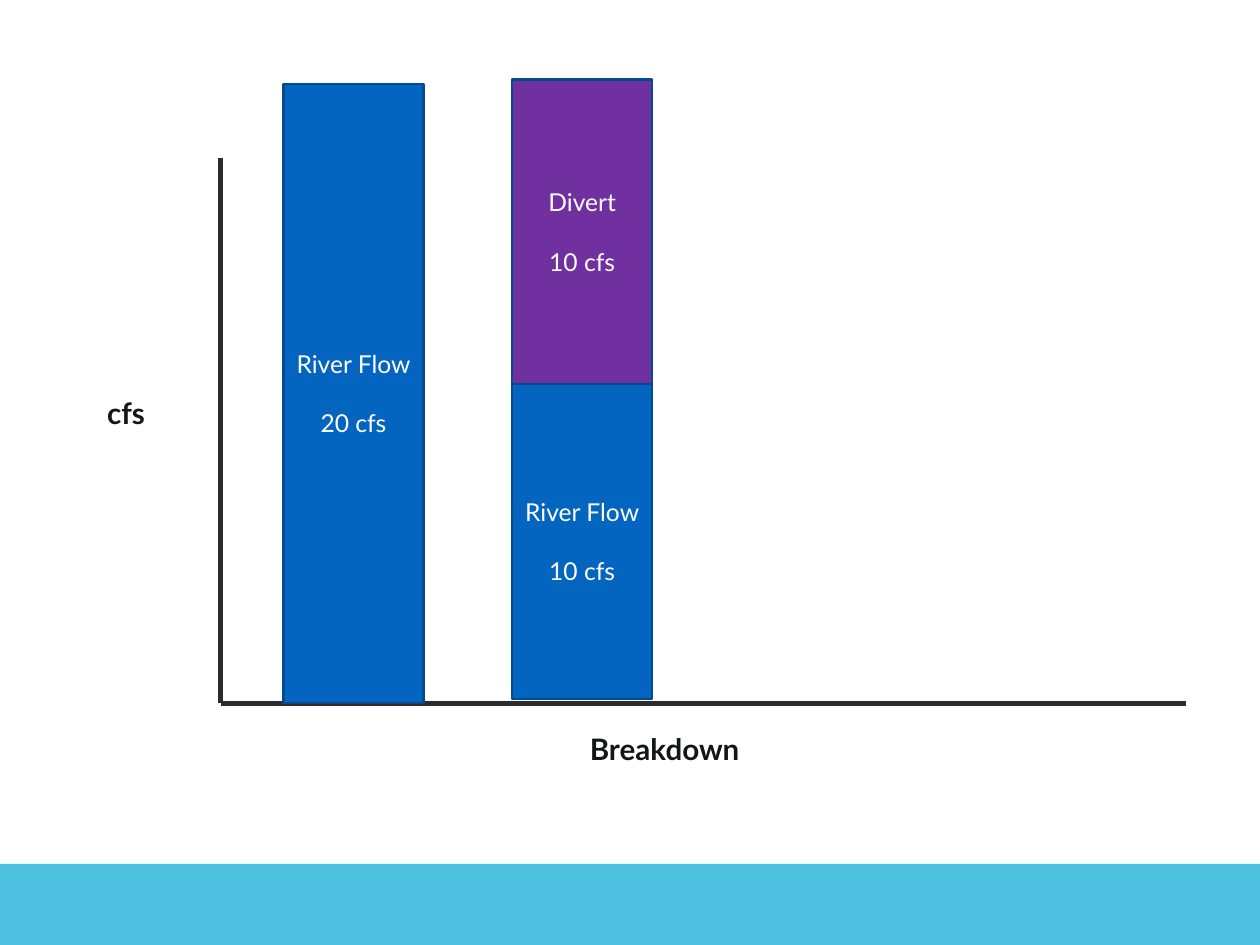
"""Build the river flow breakdown slide."""
from dataclasses import dataclass

from lxml import etree
from pptx import Presentation
from pptx.dml.color import RGBColor
from pptx.enum.shapes import MSO_CONNECTOR, MSO_SHAPE
from pptx.enum.text import MSO_ANCHOR, PP_ALIGN
from pptx.oxml.ns import qn
from pptx.shapes.autoshape import Shape
from pptx.slide import Slide
from pptx.text.text import TextFrame
from pptx.util import Pt

RECT = MSO_SHAPE.RECTANGLE
LINE = MSO_CONNECTOR.STRAIGHT
MIDDLE, TOP = MSO_ANCHOR.MIDDLE, MSO_ANCHOR.TOP
CENTER, LEFT = PP_ALIGN.CENTER, PP_ALIGN.LEFT

FONT = "Lato"
WIDTH, HEIGHT = 1024, 768
BAR_WIDTH = 113.8
BAND_TOP = 702
AXIS_LEFT, AXIS_RIGHT = 179.3, 964.1
AXIS_TOP, AXIS_BASE = 128.2, 571.7
COLORS = {
    "band": "4DC1DF",
    "axis": "2A2C2F",
    "label": "151618",
    "river": "0365C0",
    "divert": "7030A0",
    "edge": "024B8E",
    "white": "FFFFFF",
}


@dataclass
class Bar:
    """One stacked block with a name and a flow."""
    left: float
    top: float
    height: float
    color: str
    name: str
    flow: str


@dataclass
class Label:
    """One axis title."""
    left: float
    top: float
    width: float
    text: str


BARS = [
    Bar(230.4, 68.2, 503.3, "river", "River Flow", "20 cfs"),
    Bar(416.2, 312, 256.3, "river", "River Flow", "10 cfs"),
    Bar(416.2, 64.5, 247.5, "divert", "Divert", "10 cfs"),
]
LABELS = [
    Label(77, 316.3, 77, "cfs"),
    Label(469.4, 589.2, 256.3, "Breakdown"),
]


def get_color(name: str) -> RGBColor:
    """Look up a colour by name."""
    return RGBColor.from_string(COLORS[name])


def write_text(frame: TextFrame, lines: list[str], size: float, color: str,
               bold: bool, align: PP_ALIGN, anchor: MSO_ANCHOR) -> None:
    """Fill a text frame with evenly spaced lines."""
    frame.word_wrap = True
    frame.vertical_anchor = anchor
    frame.margin_left = frame.margin_right = Pt(10)
    frame.margin_top = frame.margin_bottom = Pt(5)
    frame.text = "\n".join(lines)
    for index, line in enumerate(frame.paragraphs):
        line.alignment = align
        line.space_before = Pt(24 if index else 0)
        line.font.name = FONT
        line.font.size = Pt(size)
        line.font.bold = bold
        line.font.color.rgb = get_color(color)


def draw_block(slide: Slide, left: float, top: float, width: float,
               height: float, color: str) -> Shape:
    """Draw a plain filled rectangle."""
    block = slide.shapes.add_shape(RECT, Pt(left), Pt(top), Pt(width), Pt(height))
    block.shadow.inherit = False
    block.fill.solid()
    block.fill.fore_color.rgb = get_color(color)
    block.line.fill.background()
    return block


def draw_axis(slide: Slide, left: float, top: float) -> None:
    """Draw an axis from a far end to the origin."""
    axis = slide.shapes.add_connector(
        LINE, Pt(left), Pt(top), Pt(AXIS_LEFT), Pt(AXIS_BASE))
    axis.line.color.rgb = get_color("axis")
    axis.line.width = Pt(3.5)
    etree.SubElement(axis.element.spPr, qn("a:effectLst"))


def draw_label(slide: Slide, label: Label) -> None:
    """Draw an axis title."""
    box = slide.shapes.add_textbox(
        Pt(label.left), Pt(label.top), Pt(label.width), Pt(39.6))
    write_text(box.text_frame, [label.text], 24, "label", True, LEFT, TOP)


def draw_bar(slide: Slide, bar: Bar) -> None:
    """Draw a bar with its name and flow."""
    block = draw_block(slide, bar.left, bar.top, BAR_WIDTH, bar.height, bar.color)
    block.line.color.rgb = get_color("edge")
    block.line.width = Pt(2)
    write_text(block.text_frame, [bar.name, bar.flow], 20, "white", False,
               CENTER, MIDDLE)


def main() -> None:
    """Build and save the slide."""
    deck = Presentation()
    deck.slide_width, deck.slide_height = Pt(WIDTH), Pt(HEIGHT)
    slide = deck.slides.add_slide(deck.slide_layouts[6])
    draw_block(slide, 0, BAND_TOP, WIDTH, HEIGHT - BAND_TOP, "band")
    draw_axis(slide, AXIS_LEFT, AXIS_TOP)
    draw_axis(slide, AXIS_RIGHT, AXIS_BASE)
    for label in LABELS:
        draw_label(slide, label)
    for bar in BARS:
        draw_bar(slide, bar)
    deck.save("out.pptx")


if __name__ == "__main__":
    main()
